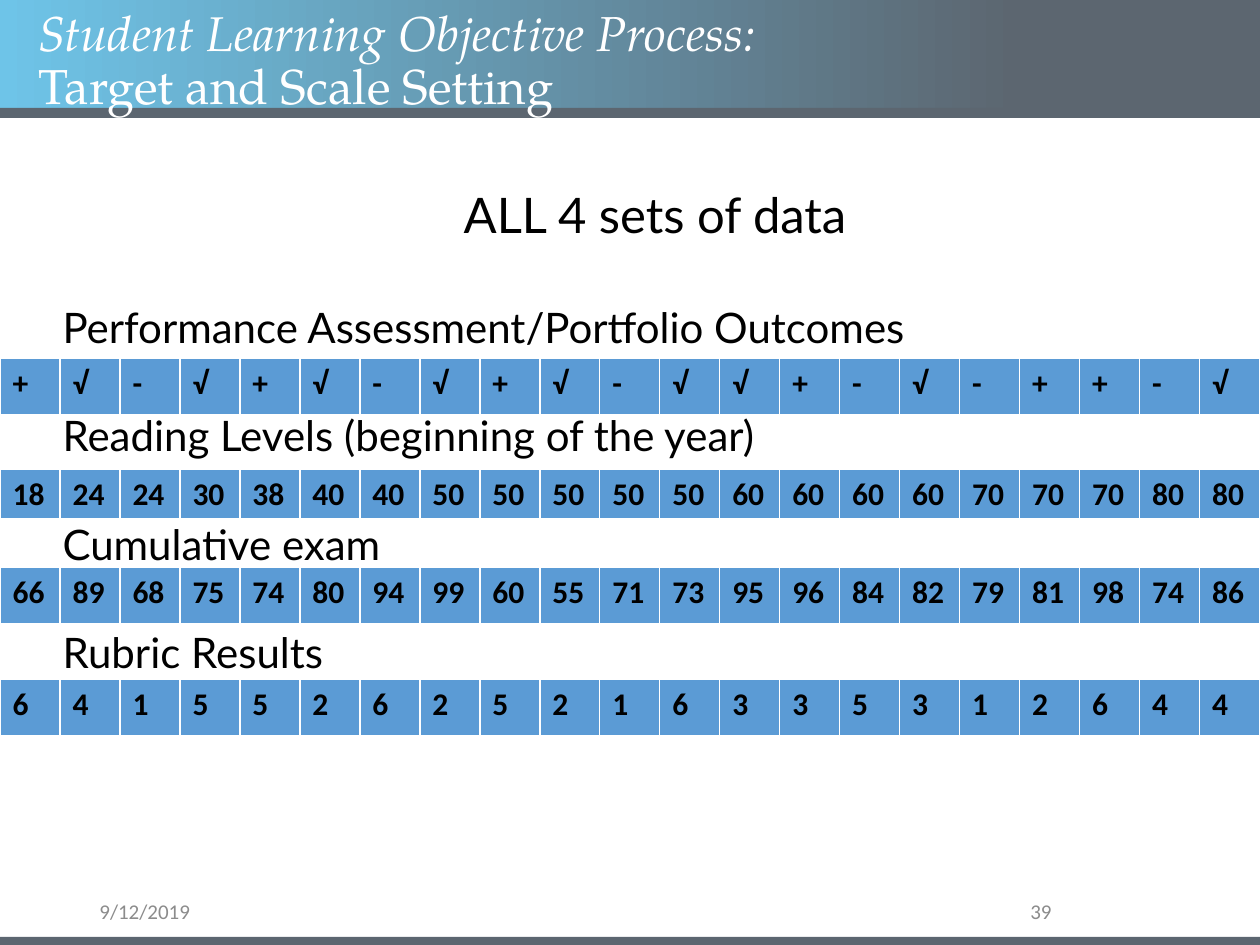
from lxml import etree
from pptx import Presentation
from pptx.dml.color import RGBColor
from pptx.enum.shapes import MSO_SHAPE
from pptx.enum.text import MSO_ANCHOR, MSO_AUTO_SIZE, PP_ALIGN
from pptx.oxml.ns import qn
from pptx.util import Emu, Pt

RECT = MSO_SHAPE.RECTANGLE
TOP, MIDDLE = MSO_ANCHOR.TOP, MSO_ANCHOR.MIDDLE
LEFT, CENTER, RIGHT = PP_ALIGN.LEFT, PP_ALIGN.CENTER, PP_ALIGN.RIGHT
NO_FIT = MSO_AUTO_SIZE.NONE
SCALE = 914400 / 126  # EMU in one px


def px(n):
    return Emu(round(n * SCALE))


def color(code):
    return RGBColor.from_string(code)


def put(para, text, font="Calibri", size=18, ink="000000",
        bold=False, italic=False, align=LEFT, line=None, before=0):
    """Add a formatted run to a paragraph."""
    para.alignment = align
    para.space_before = Pt(before)
    if line:
        para.line_spacing = line
    run = para.add_run()
    run.text = text
    face = run.font
    face.name, face.size, face.bold, face.italic = font, Pt(size), bold, italic
    face.color.rgb = color(ink)


class Deck:
    head, text = "TeX Gyre Pagella", "Lato"
    sky, slate, cell, white, gray = "6EC4E8", "5C6670", "5B9BD5", "FFFFFF", "8C8C8C"

    def __init__(self, wide, high):
        self.prs = Presentation()
        self.prs.slide_width, self.prs.slide_height = px(wide), px(high)
        self.slide = self.prs.slides.add_slide(self.prs.slide_layouts[1])
        self.shapes = self.slide.shapes

    def bar(self, x, y, w, h, fade=False):
        shape = self.shapes.add_shape(RECT, px(x), px(y), px(w), px(h))
        shape.shadow.inherit = False
        shape.line.fill.background()
        if not fade:
            shape.fill.solid()
            shape.fill.fore_color.rgb = color(self.slate)
            return
        shape.fill.gradient()
        shape.fill.gradient_angle = 0
        for stop, code, at in zip(shape.fill.gradient_stops,
                                  (self.sky, self.slate), (0, 0.81)):
            stop.color.rgb, stop.position = color(code), at

    def holder(self, shape, x, y, w, h, anchor):
        """Move a placeholder, bring it to the front, return its frame."""
        shape.left, shape.top, shape.width, shape.height = map(px, (x, y, w, h))
        self.shapes.element.append(shape.element)
        frame = shape.text_frame
        frame.auto_size, frame.vertical_anchor = NO_FIT, anchor
        frame.word_wrap = True
        return frame

    def title(self, first, second, *box):
        para = self.holder(self.shapes.title, *box, MIDDLE).paragraphs[0]
        look = dict(font=self.head, size=28, ink=self.white, line=0.9)
        put(para, first, italic=True, **look)
        para.add_line_break()
        put(para, second, **look)

    def body(self, lead, labels, *box):
        frame = self.holder(self.slide.placeholders[1], *box, TOP)
        for i, label in enumerate([lead, *labels]):
            para = frame.add_paragraph() if i else frame.paragraphs[0]
            props = para._p.get_or_add_pPr()
            props.set("marL", str(px(50)))
            props.set("indent", "0")
            etree.SubElement(props, qn("a:buNone"))
            put(para, label, font=self.text, size=24 if i else 28, line=0.9,
                align=LEFT if i else CENTER, before=36 if i else 0)

    def note(self, text, x, y, w, h, align=LEFT):
        frame = self.shapes.add_textbox(px(x), px(y), px(w), px(h)).text_frame
        frame.word_wrap, frame.vertical_anchor = True, MIDDLE
        put(frame.paragraphs[0], text, size=12, ink=self.gray, align=align)

    def edge(self, cell):
        """Draw white cell borders, thicker at the bottom."""
        props = cell._tc.get_or_add_tcPr()
        for side, width in zip("LRTB", (1, 1, 1, 3)):
            line = etree.SubElement(props, qn(f"a:ln{side}"), w=str(Pt(width)))
            fill = etree.SubElement(line, qn("a:solidFill"))
            etree.SubElement(fill, qn("a:srgbClr"), val=self.white)

    def row(self, values, y, h, step=60):
        table = self.shapes.add_table(1, len(values), 0, px(y),
                                      px(step * len(values)), px(h)).table
        table.rows[0].height = px(h)
        for col, value in enumerate(values):
            table.columns[col].width = px(step)
            cell = table.cell(0, col)
            self.edge(cell)
            cell.fill.solid()
            cell.fill.fore_color.rgb = color(self.cell)
            put(cell.text_frame.paragraphs[0], value, bold=True)


# Label, scores, top and height of each data set
SETS = [
    ("Performance Assessment/Portfolio Outcomes",
     "+ √ - √ + √ - √ + √ - √ √ + - √ - + + - √", 358, 58),
    ("Reading Levels (beginning of the year)",
     "18 24 24 30 38 40 40 50 50 50 50 50 60 60 60 60 70 70 70 80 80", 469, 50),
    ("Cumulative exam",
     "66 89 68 75 74 80 94 99 60 55 71 73 95 96 84 82 79 81 98 74 86", 567, 58),
    ("Rubric Results",
     "6 4 1 5 5 2 6 2 5 2 1 6 3 3 5 3 1 2 6 4 4", 679, 58),
]


def main():
    deck = Deck(1260, 945)

    # Banner and footer
    deck.bar(0, 0, 1260, 109, fade=True)
    deck.bar(0, 108, 1260, 10)
    deck.bar(0, 937, 1260, 10)
    deck.note("9/12/2019", 87, 897, 284, 29)
    deck.note("39", 890, 897, 174, 29, align=RIGHT)

    # Title and labels
    deck.body("ALL 4 sets of data", [label for label, *_ in SETS],
              0, 185, 1260, 607)
    deck.title("Student Learning Objective Process:",
               "Target and Scale Setting", 26, 26, 1234, 72)

    # Score rows
    for _, scores, y, h in SETS:
        deck.row(scores.split(), y, h)

    deck.prs.save("out.pptx")


if __name__ == "__main__":
    main()
